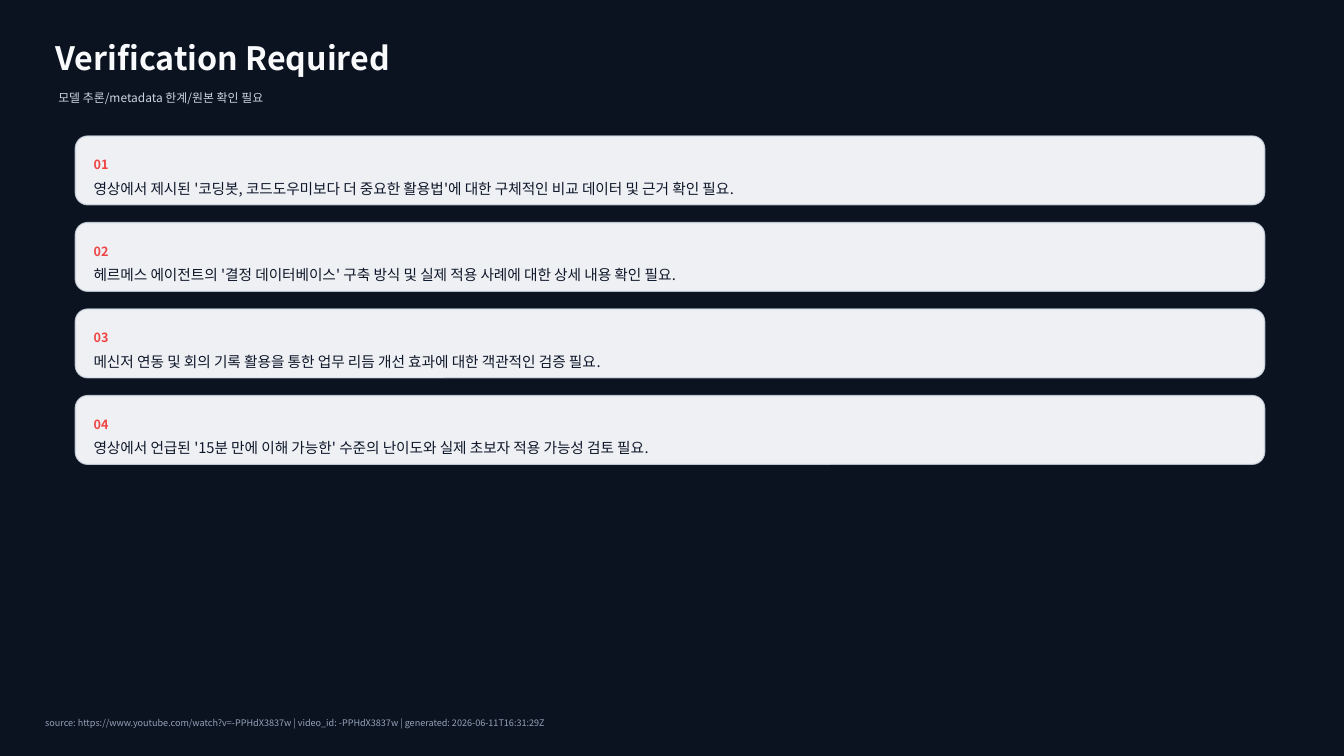
from pptx import Presentation
from pptx import util as u
from pptx.dml.color import RGBColor
from pptx.enum import shapes, text
from pptx.oxml.ns import qn
from lxml import etree

FONT = "Noto Sans CJK KR"
HUES = {
    "back": "0B1220",
    "title": "F8FAFC",
    "sub": "CBD5E1",
    "card": "F8FAFC",
    "edge": "D7E0EA",
    "mark": "EF4444",
    "body": "0F172A",
    "foot": "94A3B8",
}

deck = Presentation()
deck.slide_width, deck.slide_height = u.Cm(33.87), u.Cm(19.05)
slide = deck.slides.add_slide(deck.slide_layouts[6])
slide.background.fill.solid()
slide.background.fill.fore_color.rgb = RGBColor.from_string(HUES["back"])


def write(words, left, top, width, height, size, hue, bold=False):
    box = slide.shapes.add_textbox(u.Cm(left), u.Cm(top), u.Cm(width), u.Cm(height))
    frame = box.text_frame
    frame.margin_left = frame.margin_right = frame.margin_top = frame.margin_bottom = 0
    frame.word_wrap = True
    frame.vertical_anchor = text.MSO_ANCHOR.MIDDLE
    para = frame.paragraphs[0]
    para.text = words
    para.font.size = u.Pt(size)
    para.font.bold = bold
    para.font.color.rgb = RGBColor.from_string(HUES[hue])
    para.font.name = FONT
    props = para._p.pPr.find(qn("a:defRPr"))
    etree.SubElement(props, qn("a:ea"), typeface=FONT)


def paint(fill, hue, alpha):
    fill.solid()
    fill.fore_color.rgb = RGBColor.from_string(HUES[hue])
    tint = fill._xPr.find(qn("a:solidFill"))[0]
    etree.SubElement(tint, qn("a:alpha"), val=str(alpha * 1000))


write("Verification Required", 1.4, 0.89, 30.48, 1.14, 23, "title", True)
write("모델 추론/metadata 한계/원본 확인 필요", 1.47, 2.11, 29.21, 0.71, 8.5, "sub")

checks = [
    "영상에서 제시된 '코딩봇, 코드도우미보다 더 중요한 활용법'에 대한 구체적인 비교 데이터 및 근거 확인 필요.",
    "헤르메스 에이전트의 '결정 데이터베이스' 구축 방식 및 실제 적용 사례에 대한 상세 내용 확인 필요.",
    "메신저 연동 및 회의 기록 활용을 통한 업무 리듬 개선 효과에 대한 객관적인 검증 필요.",
    "영상에서 언급된 '15분 만에 이해 가능한' 수준의 난이도와 실제 초보자 적용 가능성 검토 필요.",
]
for row, check in enumerate(checks):
    top = 3.43 + row * 2.18
    card = slide.shapes.add_shape(
        shapes.MSO_SHAPE.ROUNDED_RECTANGLE,
        u.Cm(1.9), u.Cm(top), u.Cm(29.97), u.Cm(1.73))
    card.adjustments[0] = 0.18
    card.shadow.inherit = False
    paint(card.fill, "card", 96)
    paint(card.line.fill, "edge", 80)
    card.line.width = u.Pt(1)
    write(f"{row + 1:02}", 2.36, top + 0.4, 29.06, 0.64, 9, "mark", True)
    write(check, 2.36, top + 1.27, 29.06, 0.1, 10.5, "body")

write(
    "source: https://www.youtube.com/watch?v=-PPHdX3837w | video_id: -PPHdX3837w | generated: 2026-06-11T16:31:29Z",
    1.14, 17.9, 31.5, 0.64, 6.5, "foot")

deck.save("out.pptx")
